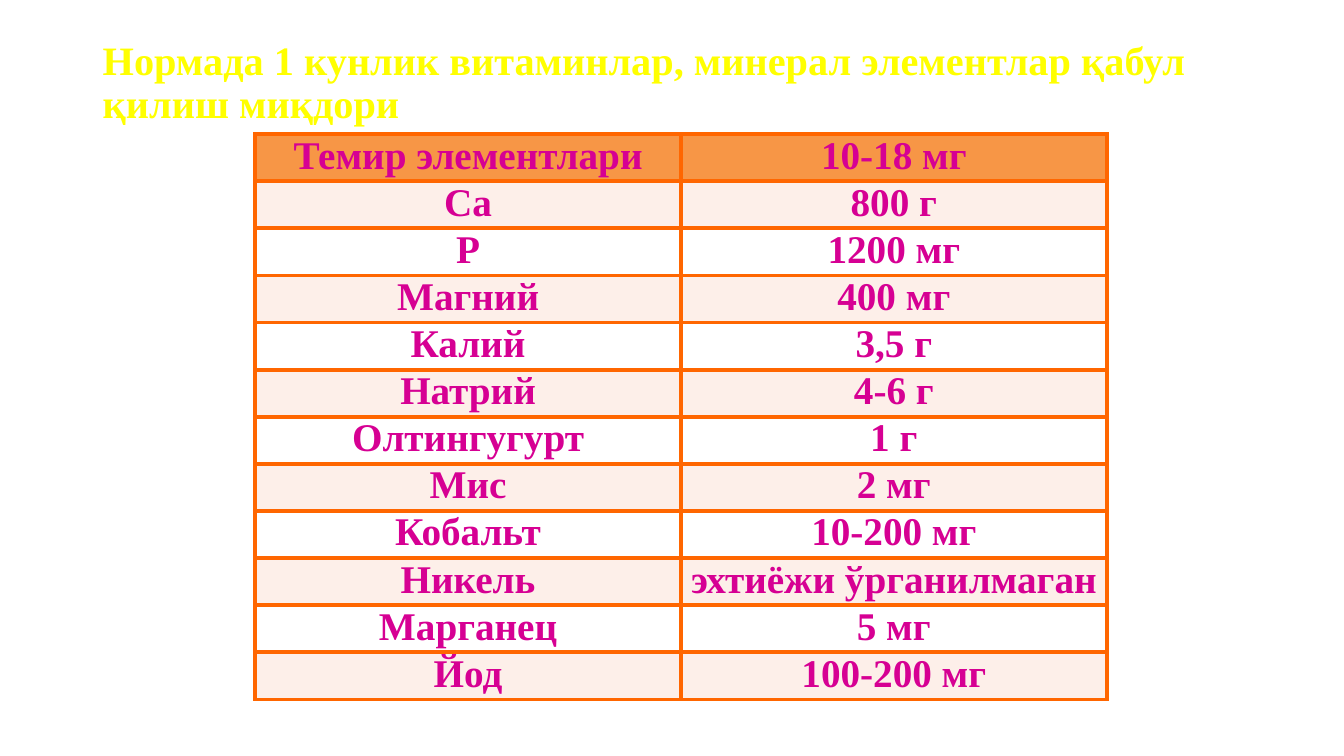
import pptx
import pptx.dml.color
import pptx.enum.text
import pptx.oxml.ns
import pptx.util
from lxml import etree

TITLE = "Нормада 1 кунлик витаминлар, минерал элементлар қабул қилиш миқдори"
DAILY_NORMS = [
    ("Темир элементлари", "10-18 мг"),
    ("Са", "800 г"),
    ("Р", "1200 мг"),
    ("Магний", "400 мг"),
    ("Калий", "3,5 г"),
    ("Натрий", "4-6 г"),
    ("Олтингугурт", "1 г"),
    ("Мис", "2 мг"),
    ("Кобальт", "10-200 мг"),
    ("Никель", "эхтиёжи ўрганилмаган"),
    ("Марганец", "5 мг"),
    ("Йод", "100-200 мг"),
]
THEME = {
    "font": "Times New Roman",
    "title": {"size": 28.8, "color": "FFFF00"},
    "cell": {"size": 28, "color": "D60093"},
    "header_fill": "F79646",
    "band_fills": ("FFFFFF", "FDEFE9"),
    "border": {"color": "FF6600", "width": 3},
}

Cm, Pt = pptx.util.Cm, pptx.util.Pt
RGB = pptx.dml.color.RGBColor.from_string
ALIGN = pptx.enum.text.PP_ALIGN
TITLE_BOX = (Cm(2.34), Cm(1.02), Cm(29.2), Cm(3.68))
TABLE_LEFT, TABLE_TOP, TABLE_WIDTH, TABLE_HEIGHT = Cm(6.43), Cm(3.38), Cm(21.46), Cm(14.22)


def write(p, text, style, align):
    p.alignment = align
    r = p.add_run()
    r.text = text
    formats = {"name": THEME["font"], "size": Pt(style["size"]), "bold": True}
    for name, value in formats.items():
        setattr(r.font, name, value)
    r.font.color.rgb = RGB(style["color"])


def add_borders(cell):
    qn = pptx.oxml.ns.qn
    tc_pr = cell._tc.get_or_add_tcPr()
    for side in ("lnL", "lnR", "lnT", "lnB"):
        ln = etree.SubElement(tc_pr, qn(f"a:{side}"), w=str(Pt(THEME["border"]["width"])))
        fill = etree.SubElement(ln, qn("a:solidFill"))
        etree.SubElement(fill, qn("a:srgbClr"), val=THEME["border"]["color"])


def add_title(s):
    tf = s.shapes.add_textbox(*TITLE_BOX).text_frame
    formats = {"word_wrap": True, "margin_top": 0,
               "vertical_anchor": pptx.enum.text.MSO_ANCHOR.TOP}
    for name, value in formats.items():
        setattr(tf, name, value)
    p = tf.paragraphs[0]
    p.line_spacing = 0.9
    write(p, TITLE, THEME["title"], ALIGN.LEFT)


def add_norms_table(s):
    rows, cols = len(DAILY_NORMS), len(DAILY_NORMS[0])
    table = s.shapes.add_table(rows, cols, TABLE_LEFT, TABLE_TOP,
                               TABLE_WIDTH, TABLE_HEIGHT).table
    margins = {"margin_left": Cm(0.18), "margin_right": Cm(0.18),
               "margin_top": 0, "margin_bottom": 0}
    for i, norm in enumerate(DAILY_NORMS):
        fill = THEME["band_fills"][i % 2] if i else THEME["header_fill"]
        for j, text in enumerate(norm):
            cell = table.cell(i, j)
            for name, value in margins.items():
                setattr(cell, name, value)
            add_borders(cell)
            cell.fill.solid()
            cell.fill.fore_color.rgb = RGB(fill)
            write(cell.text_frame.paragraphs[0], text, THEME["cell"], ALIGN.CENTER)


def main():
    prs = pptx.Presentation()
    prs.slide_width, prs.slide_height = Cm(33.87), Cm(19.05)
    s = prs.slides.add_slide(prs.slide_layouts[6])
    add_title(s)
    add_norms_table(s)
    prs.save("out.pptx")


if __name__ == "__main__":
    main()
